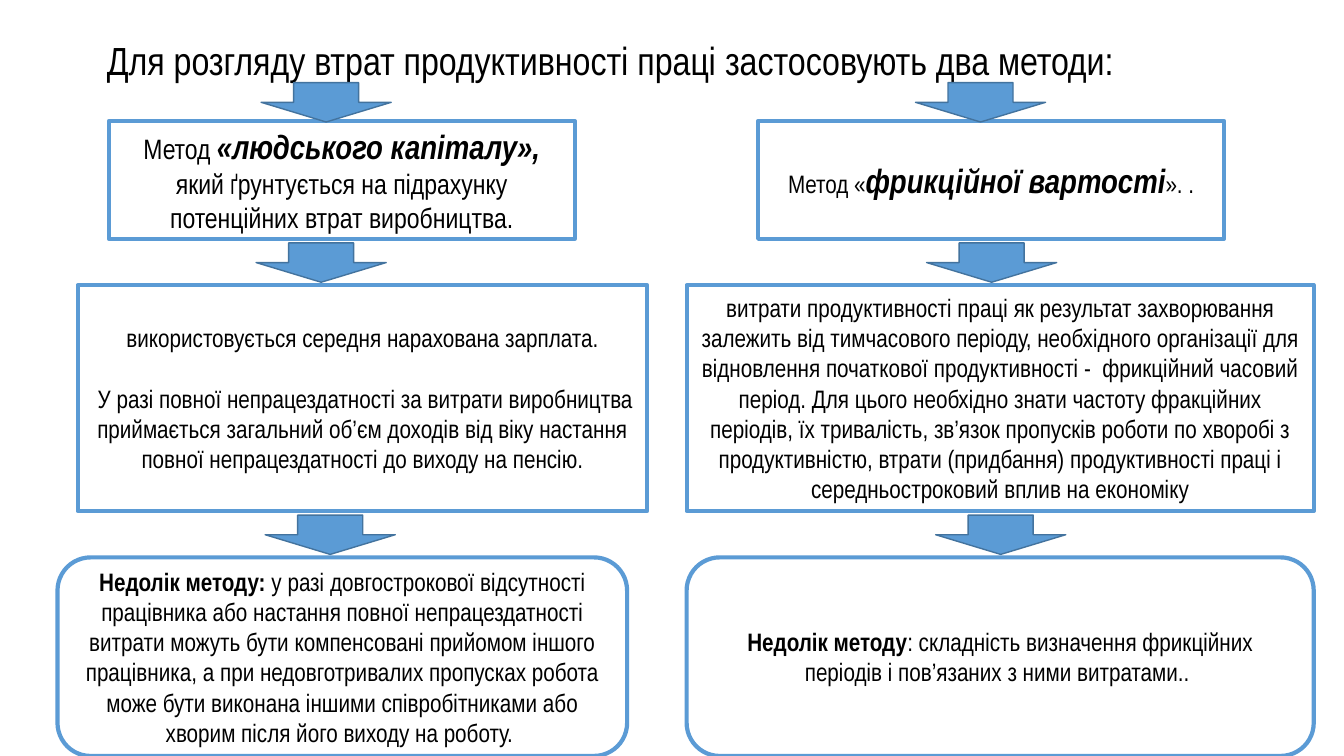
from pptx import Presentation
from pptx.dml.color import RGBColor
from pptx.enum.shapes import MSO_SHAPE as Shape
from pptx.enum.text import MSO_ANCHOR as Anchor, PP_ALIGN as Align
from pptx.util import Inches, Pt

FONT = "Arial Narrow"
BLACK = RGBColor(0x00, 0x00, 0x00)
WHITE = RGBColor(0xFF, 0xFF, 0xFF)
BLUE = RGBColor(0x5B, 0x9B, 0xD5)
NAVY = RGBColor(0x43, 0x73, 0x9E)

TITLE = "Для розгляду втрат продуктивності праці застосовують два методи:"

# Each box is a list of paragraphs; each run is (text, size, style),
# where style holds "b" for bold and "i" for italic.
CAPITAL = [
    [[("Метод ", 20, ""), ("«людського капіталу», ", 24, "bi"),
      ("який ґрунтується на підрахунку потенційних втрат виробництва.", 20, "")]],
    [[("використовується середня нарахована зарплата.", 18, "")],
     [(" У разі повної непрацездатності за витрати виробництва приймається "
       "загальний об’єм доходів від віку настання повної непрацездатності "
       "до виходу на пенсію.", 18, "")]],
    [[("Недолік методу: ", 18, "b"),
      ("у разі довгострокової відсутності працівника або настання повної "
       "непрацездатності витрати можуть бути компенсовані прийомом іншого "
       "працівника, а при недовготривалих пропусках робота може бути виконана "
       "іншими співробітниками або хворим після його виходу на роботу. ", 18, "")]],
]
FRICTION = [
    [[("Метод «", 18, ""), ("фрикційної вартості", 24, "bi"), ("». .", 18, "")]],
    [[("витрати продуктивності праці як результат захворювання залежить від "
       "тимчасового періоду, необхідного організації для відновлення початкової "
       "продуктивності -  фрикційний часовий період. Для цього необхідно знати "
       "частоту фракційних періодів, їх тривалість, зв’язок пропусків роботи по "
       "хворобі з продуктивністю, втрати (придбання) продуктивності праці і "
       "середньостроковий вплив на економіку", 18, "")]],
    [[("Недолік методу", 18, "b"),
      (": складність визначення фрикційних періодів і пов’язаних з ними "
       "витратами.. ", 18, "")]],
]

# Rows: outline, box top, box height, arrow top
ROWS = [
    (Shape.RECTANGLE, 1.2, 1.17, 0.82),
    (Shape.RECTANGLE, 2.83, 2.24, 2.41),
    (Shape.ROUNDED_RECTANGLE, 5.53, 1.97, 5.11),
]
# Columns: texts, then box left, box width and arrow left for each row
COLS = [
    (CAPITAL, [(1.08, 4.62, 2.59), (0.77, 5.65, 2.54), (0.57, 5.65, 2.63)]),
    (FRICTION, [(7.52, 4.62, 9.08), (6.81, 6.22, 9.19), (6.81, 6.22, 9.28)]),
]
ARROW = (1.29, 0.39)
GAP = Pt(21.6)


def style(font, size, marks=""):
    font.name, font.size = FONT, Pt(size)
    font.bold, font.italic = "b" in marks, "i" in marks
    font.color.rgb = BLACK


def draw(slide, kind, area, fill, line, width):
    """Add a preset shape; area is left, top, width, height in inches."""
    shape = slide.shapes.add_shape(kind, *map(Inches, area))
    shape.shadow.inherit = False
    shape.fill.solid()
    shape.fill.fore_color.rgb = fill
    shape.line.color.rgb = line
    shape.line.width = Pt(width)
    return shape


def write(shape, paras):
    frame = shape.text_frame
    frame.word_wrap = True
    frame.vertical_anchor = Anchor.MIDDLE
    for num, runs in enumerate(paras):
        para = frame.add_paragraph() if num else frame.paragraphs[0]
        para.alignment = Align.CENTER
        if num:
            para.space_before = GAP
        for text, size, marks in runs:
            run = para.add_run()
            run.text = text
            style(run.font, size, marks)


def head(slide):
    title = slide.shapes.title
    title.left, title.top = Inches(0.96), Inches(0.26)
    title.width, title.height = Inches(11.5), Inches(0.73)
    frame = title.text_frame
    frame.text = TITLE
    frame.vertical_anchor = Anchor.MIDDLE
    para = frame.paragraphs[0]
    para.alignment = Align.LEFT
    para.line_spacing = 0.9
    style(para.runs[0].font, 28)


def main():
    deck = Presentation()
    deck.slide_width, deck.slide_height = Inches(13.33), Inches(7.5)
    slide = deck.slides.add_slide(deck.slide_layouts[5])
    head(slide)
    for texts, spots in COLS:
        for paras, spot, row in zip(texts, spots, ROWS):
            left, width, tip = spot
            kind, top, height, drop = row
            box = draw(slide, kind, (left, top, width, height), WHITE, BLUE, 3)
            write(box, paras)
            draw(slide, Shape.DOWN_ARROW, (tip, drop, *ARROW), BLUE, NAVY, 1)
    deck.save("out.pptx")


if __name__ == "__main__":
    main()
